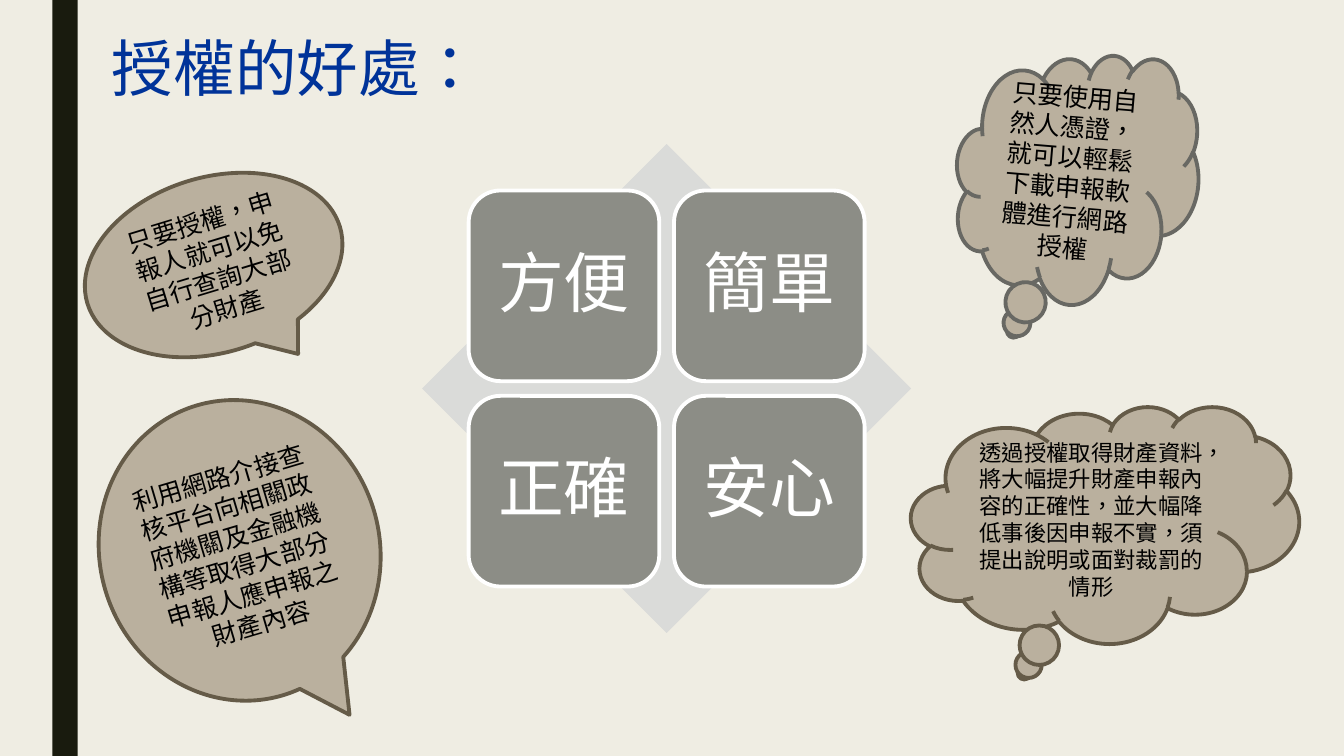
import pptx
import pptx.util
import pptx.dml.color
import pptx.enum.shapes
import pptx.enum.text
import pptx.oxml
import pptx.oxml.ns

Cm = pptx.util.Cm
Pt = pptx.util.Pt
RGBColor = pptx.dml.color.RGBColor
MSO_SHAPE = pptx.enum.shapes.MSO_SHAPE
MSO_ANCHOR = pptx.enum.text.MSO_ANCHOR
PP_ALIGN = pptx.enum.text.PP_ALIGN

CREAM = RGBColor(0xEF, 0xED, 0xE3)
DARK_OLIVE = RGBColor(0x19, 0x1B, 0x0E)
TITLE_BLUE = RGBColor(0x00, 0x33, 0x99)
PALE_GREY = RGBColor(0xDA, 0xDB, 0xD9)
TILE_GREY = RGBColor(0x8C, 0x8D, 0x86)
SAND = RGBColor(0xBA, 0xB0, 0x9E)
BROWN = RGBColor(0x65, 0x5B, 0x48)
SLATE = RGBColor(0x68, 0x68, 0x63)
WHITE = RGBColor(0xFF, 0xFF, 0xFF)
BLACK = RGBColor(0x00, 0x00, 0x00)

BODY_FONT = "Karla"
CHINESE_FONT = "Noto Sans CJK SC"


def write_text(shape, text, size, color, font=BODY_FONT, align=PP_ALIGN.CENTER,
               anchor=MSO_ANCHOR.MIDDLE, spacing=None, wrap=True):
    frame = shape.text_frame
    frame.word_wrap = wrap
    frame.vertical_anchor = anchor
    paragraph = frame.paragraphs[0]
    paragraph.alignment = align
    if spacing:
        paragraph.line_spacing = spacing
    run = paragraph.add_run()
    run.text = text
    run.font.size = Pt(size)
    run.font.color.rgb = color
    run.font.name = font
    properties = run.font._element
    properties.set("lang", "zh-TW")
    if font == CHINESE_FONT:
        east_asian = pptx.oxml.parse_xml(
            f'<a:ea {pptx.oxml.ns.nsdecls("a")} typeface="{font}"/>')
        properties.find(pptx.oxml.ns.qn("a:latin")).addnext(east_asian)


def add_filled_shape(slide, kind, box, fill, line=None):
    shape = slide.shapes.add_shape(kind, *(Cm(length) for length in box))
    shape.shadow.inherit = False
    shape.fill.solid()
    shape.fill.fore_color.rgb = fill
    if line is None:
        shape.line.fill.background()
    else:
        shape.line.color.rgb = line
        shape.line.width = Pt(2.75)
    return shape


def add_title(slide, box, text):
    title = slide.shapes.add_textbox(*(Cm(length) for length in box))
    write_text(title, text, 44, TITLE_BLUE, font=CHINESE_FONT,
               align=PP_ALIGN.LEFT, anchor=MSO_ANCHOR.TOP, spacing=0.89)


def add_benefit_matrix(slide, box, labels):
    left, top, width, height = box
    add_filled_shape(slide, MSO_SHAPE.DIAMOND, box, PALE_GREY)
    for index, label in enumerate(labels):
        row, column = divmod(index, 2)
        tile_box = (left + width * (0.095 + 0.42 * column),
                    top + height * (0.095 + 0.42 * row),
                    width * 0.39, height * 0.39)
        tile = add_filled_shape(slide, MSO_SHAPE.ROUNDED_RECTANGLE, tile_box,
                                TILE_GREY, WHITE)
        write_text(tile, label, 47, WHITE, spacing=0.9, wrap=False)


def add_callout(slide, kind, box, text, size=18, line=BROWN, rotation=0, flipped=False):
    callout = add_filled_shape(slide, kind, box, SAND, line)
    callout.rotation = rotation
    if flipped:
        callout._element.spPr.find(pptx.oxml.ns.qn("a:xfrm")).set("flipH", "1")
    write_text(callout, text, size, BLACK)


def main():
    presentation = pptx.Presentation()
    presentation.slide_width = Cm(33.87)
    presentation.slide_height = Cm(19.05)
    slide = presentation.slides.add_slide(presentation.slide_layouts[6])
    slide.background.fill.solid()
    slide.background.fill.fore_color.rgb = CREAM

    add_filled_shape(slide, MSO_SHAPE.RECTANGLE, (1.32, 0, 0.64, 19.05), DARK_OLIVE)
    add_title(slide, (2.57, 0.86, 10.01, 2.24), "授權的好處：")
    add_benefit_matrix(slide, (10.64, 3.63, 12.32, 12.32),
                       ["方便", "簡單", "正確", "安心"])

    add_callout(slide, MSO_SHAPE.OVAL_CALLOUT, (2.06, 4.47, 6.65, 4.42),
                "只要授權，申報人就可以免自行查詢大部分財產",
                rotation=343.1, flipped=True)
    add_callout(slide, MSO_SHAPE.OVAL_CALLOUT, (2.51, 10.06, 7.06, 7.62),
                "利用網路介接查核平台向相關政府機關及金融機構等取得大部分申報人應申報之財產內容",
                rotation=343.4, flipped=True)
    add_callout(slide, MSO_SHAPE.CLOUD_CALLOUT, (24.1, 1.32, 6.1, 6.35),
                "只要使用自然人憑證，就可以輕鬆下載申報軟體進行網路授權",
                line=SLATE, rotation=4.9)
    add_callout(slide, MSO_SHAPE.CLOUD_CALLOUT, (22.96, 10.24, 9.78, 5.97),
                "透過授權取得財產資料，將大幅提升財產申報內容的正確性，"
                "並大幅降低事後因申報不實，須提出說明或面對裁罰的情形",
                size=16)

    presentation.save("out.pptx")


if __name__ == "__main__":
    main()
